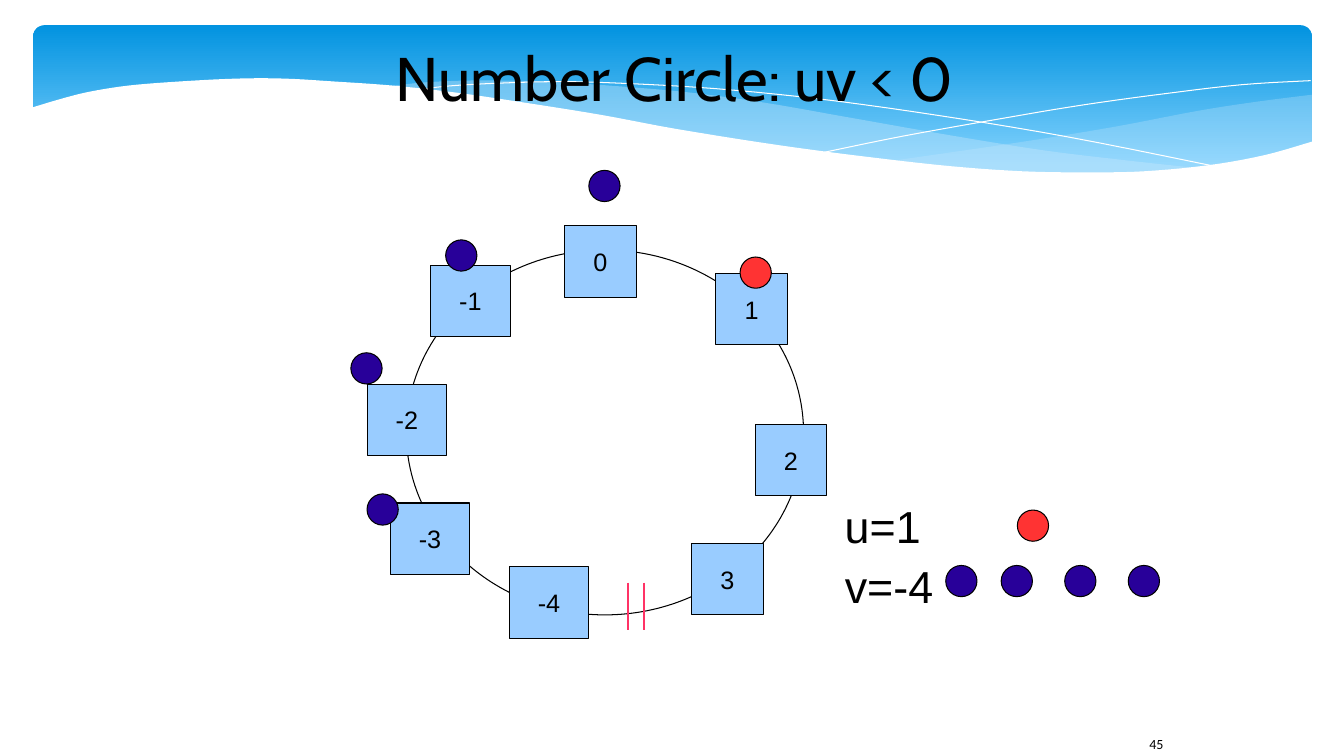
from dataclasses import dataclass

from lxml.etree import SubElement
from pptx import Presentation
from pptx.dml.color import RGBColor
from pptx.enum.shapes import MSO_CONNECTOR, MSO_SHAPE as Preset
from pptx.enum.text import MSO_ANCHOR as Anchor, MSO_AUTO_SIZE as AutoSize, PP_ALIGN as Align
from pptx.oxml.ns import qn
from pptx.util import Inches, Pt

Point = tuple[float, float]
BLACK, WHITE, MIST = "000000", "FFFFFF", "C6E7FC"
BOX_BLUE, RED, INDIGO, PINK = "99CCFF", "FF3333", "280099", "FF3366"
BOX_HEIGHT, DOT_SIZE = 0.71, 0.31


@dataclass(frozen=True)
class Wave:
    edges: list[list[Point]]
    fill: str | None = None
    opacity: int = 100


@dataclass(frozen=True)
class NumberBox:
    text: str
    left: float
    top: float
    width: float = 0.71


@dataclass(frozen=True)
class Dot:
    left: float
    top: float
    color: str = INDIGO


@dataclass(frozen=True)
class Label:
    text: str
    left: float
    top: float
    width: float
    height: float
    size: int
    font: str


WAVES = [
    Wave([[(13.01, 0.94), (12.46, 1.01), (11.88, 1.1), (11.1, 1.25), (10.38, 1.37),
           (9.72, 1.47), (8.82, 1.6)],
          [(8.82, 1.6), (9.4, 1.65), (10.09, 1.7), (10.71, 1.72), (11.26, 1.71),
           (11.74, 1.67), (12.28, 1.6), (12.66, 1.52), (13.01, 1.42)]], MIST, 29),
    Wave([[(11.9, 1.67), (11.16, 1.59), (10.34, 1.49), (9.41, 1.34), (8.39, 1.16),
           (7.59, 1.02), (6.86, 0.92), (6.19, 0.86), (5.6, 0.82), (5.06, 0.8),
           (4.59, 0.8), (4.18, 0.82), (3.82, 0.86)],
          [(3.82, 0.86), (4.56, 0.94), (5.39, 1.06), (5.99, 1.16), (7.06, 1.35),
           (8.02, 1.5), (8.87, 1.61), (9.63, 1.68), (10.3, 1.72), (10.9, 1.73),
           (11.43, 1.71), (11.9, 1.67)]], MIST, 40),
    Wave([[(4.12, 0.9), (4.38, 0.86), (4.84, 0.83), (5.55, 0.81), (6.25, 0.83),
           (7.1, 0.88), (8.11, 0.98), (9.27, 1.14), (10.6, 1.36), (12.1, 1.66)]]),
    Wave([[(8.18, 1.51), (8.96, 1.35), (9.97, 1.17), (10.75, 1.04), (11.55, 0.93),
           (12.32, 0.84), (13, 0.8)]]),
    Wave([[(13.03, 1.4), (12.54, 1.54), (11.98, 1.64), (11.34, 1.7), (10.78, 1.71),
           (10.15, 1.7), (9.44, 1.65), (8.63, 1.56), (7.72, 1.44), (6.71, 1.28),
           (5.96, 1.14), (5.21, 1.02), (4.53, 0.92), (3.9, 0.85), (3.33, 0.81),
           (2.82, 0.78), (2.35, 0.78), (1.76, 0.81), (1.27, 0.85), (0.89, 0.91),
           (0.61, 0.98), (0.31, 1.07)],
          [(0.31, 2.24), (13.03, 2.24)]], WHITE),
]
NUMBER_BOXES = [
    NumberBox("0", 5.6, 2.24), NumberBox("1", 7.1, 2.71),
    NumberBox("2", 7.49, 4.21), NumberBox("3", 6.86, 5.39),
    NumberBox("-1", 4.27, 2.63, 0.79), NumberBox("-2", 3.64, 3.81, 0.79),
    NumberBox("-3", 3.87, 4.99, 0.79), NumberBox("-4", 5.05, 5.62, 0.79),
]
BREAK_MARKS = [6.23, 6.39]
DOTS = [
    Dot(7.34, 2.55, RED), Dot(5.84, 1.69), Dot(4.42, 2.38), Dot(3.48, 3.5), Dot(3.64, 4.9),
    Dot(10.09, 5.06, RED), *(Dot(left, 5.61) for left in (9.38, 9.93, 10.56, 11.19)),
]
LABELS = [
    Label("u=1", 8.28, 4.9, 0.96, 0.62, 32, "Arial"),
    Label("v=-4", 8.28, 5.49, 1.08, 0.62, 32, "Arial"),
    Label("45", 11.3, 7.25, 0.61, 0.25, 10, "Calibri"),
]


def paint(target, color: str) -> None:
    target.rgb = RGBColor.from_string(color)


def paint_fill(shape, color: str | None, opacity: int = 100) -> None:
    if color is None:
        shape.fill.background()
        return
    shape.fill.solid()
    paint(shape.fill.fore_color, color)
    if opacity < 100:
        tint = shape.element.spPr.find(f"{qn('a:solidFill')}/{qn('a:srgbClr')}")
        SubElement(tint, qn("a:alpha"), val=str(opacity * 1000))


def paint_line(shape, color: str, width: float = 0) -> None:
    paint(shape.line.color, color)
    shape.line.width = Pt(width)


def write(frame, text: str, size: int, font: str, align: Align = Align.LEFT) -> None:
    paragraph = frame.paragraphs[0]
    paragraph.alignment = align
    run = paragraph.add_run()
    run.text = text
    run.font.size = Pt(size)
    run.font.name = font
    paint(run.font.color, BLACK)


def smooth(points: list[Point], steps: int = 5) -> list[Point]:
    if len(points) < 3:
        return points
    padded = [points[0], *points, points[-1]]
    curve = []
    for a, b, c, d in zip(padded, padded[1:], padded[2:], padded[3:]):
        for t in (step / steps for step in range(steps)):
            curve.append(tuple(
                q + ((r - p) * t + (2 * p - 5 * q + 4 * r - s) * t**2
                     + (3 * q - p - 3 * r + s) * t**3) / 2
                for p, q, r, s in zip(a, b, c, d)))
    return curve + [points[-1]]


def add_preset(slide, preset: Preset, left: float, top: float, width: float, height: float):
    shape = slide.shapes.add_shape(preset, Inches(left), Inches(top), Inches(width), Inches(height))
    shape.shadow.inherit = False
    return shape


def add_banner(slide) -> None:
    banner = add_preset(slide, Preset.ROUNDED_RECTANGLE, 0.33, 0.25, 12.68, 1.56)
    banner.adjustments[0] = 0.071
    banner.line.fill.background()
    banner.fill.gradient()
    banner.fill.gradient_angle = 270
    for stop, position, color in zip(banner.fill.gradient_stops, (0, 0.9), ("0293E0", "83D3FE")):
        stop.position = position
        paint(stop.color, color)


def add_wave(slide, wave: Wave) -> None:
    outline = [(Inches(x), Inches(y)) for edge in wave.edges for x, y in smooth(edge)]
    builder = slide.shapes.build_freeform(*outline[0])
    builder.add_line_segments(outline[1:], close=wave.fill is not None)
    shape = builder.convert_to_shape()
    shape.shadow.inherit = False
    paint_fill(shape, wave.fill, wave.opacity)
    if wave.fill:
        shape.line.fill.background()
    else:
        paint_line(shape, WHITE)


def add_title(slide) -> None:
    title = slide.shapes.title
    slide.shapes.element.append(title.element)
    title.left, title.top, title.width, title.height = map(Inches, (2.64, 0.25, 8.11, 1.02))
    frame = title.text_frame
    frame.margin_left = frame.margin_right = frame.margin_top = frame.margin_bottom = 0
    frame.vertical_anchor = Anchor.MIDDLE
    frame.auto_size = AutoSize.NONE
    write(frame, "Number Circle: uv < 0", 44, "Cabin", Align.CENTER)


def add_oval(slide, left: float, top: float, width: float, height: float, color: str | None) -> None:
    oval = add_preset(slide, Preset.OVAL, left, top, width, height)
    paint_fill(oval, color)
    paint_line(oval, BLACK)


def add_number_box(slide, box: NumberBox) -> None:
    square = add_preset(slide, Preset.RECTANGLE, box.left, box.top, box.width, BOX_HEIGHT)
    paint_fill(square, BOX_BLUE)
    paint_line(square, BLACK)
    square.text_frame.word_wrap = False
    square.text_frame.vertical_anchor = Anchor.MIDDLE
    write(square.text_frame, box.text, 18, "Arial", Align.CENTER)


def add_break_mark(slide, x: float) -> None:
    mark = slide.shapes.add_connector(
        MSO_CONNECTOR.STRAIGHT, Inches(x), Inches(5.78), Inches(x), Inches(6.25))
    paint_line(mark, PINK, 1.42)
    SubElement(mark.element.spPr, qn("a:effectLst"))


def add_label(slide, label: Label) -> None:
    box = slide.shapes.add_textbox(
        *map(Inches, (label.left, label.top, label.width, label.height)))
    box.text_frame.word_wrap = False
    write(box.text_frame, label.text, label.size, label.font)


def main() -> None:
    deck = Presentation()
    deck.slide_width, deck.slide_height = Inches(13.33), Inches(7.5)
    slide = deck.slides.add_slide(deck.slide_layouts[5])
    add_banner(slide)
    for wave in WAVES:
        add_wave(slide, wave)
    add_title(slide)
    add_oval(slide, 4.03, 2.48, 3.94, 3.62, None)
    for box in NUMBER_BOXES:
        add_number_box(slide, box)
    for x in BREAK_MARKS:
        add_break_mark(slide, x)
    for dot in DOTS:
        add_oval(slide, dot.left, dot.top, DOT_SIZE, DOT_SIZE, dot.color)
    for label in LABELS:
        add_label(slide, label)
    deck.save("out.pptx")


if __name__ == "__main__":
    main()
